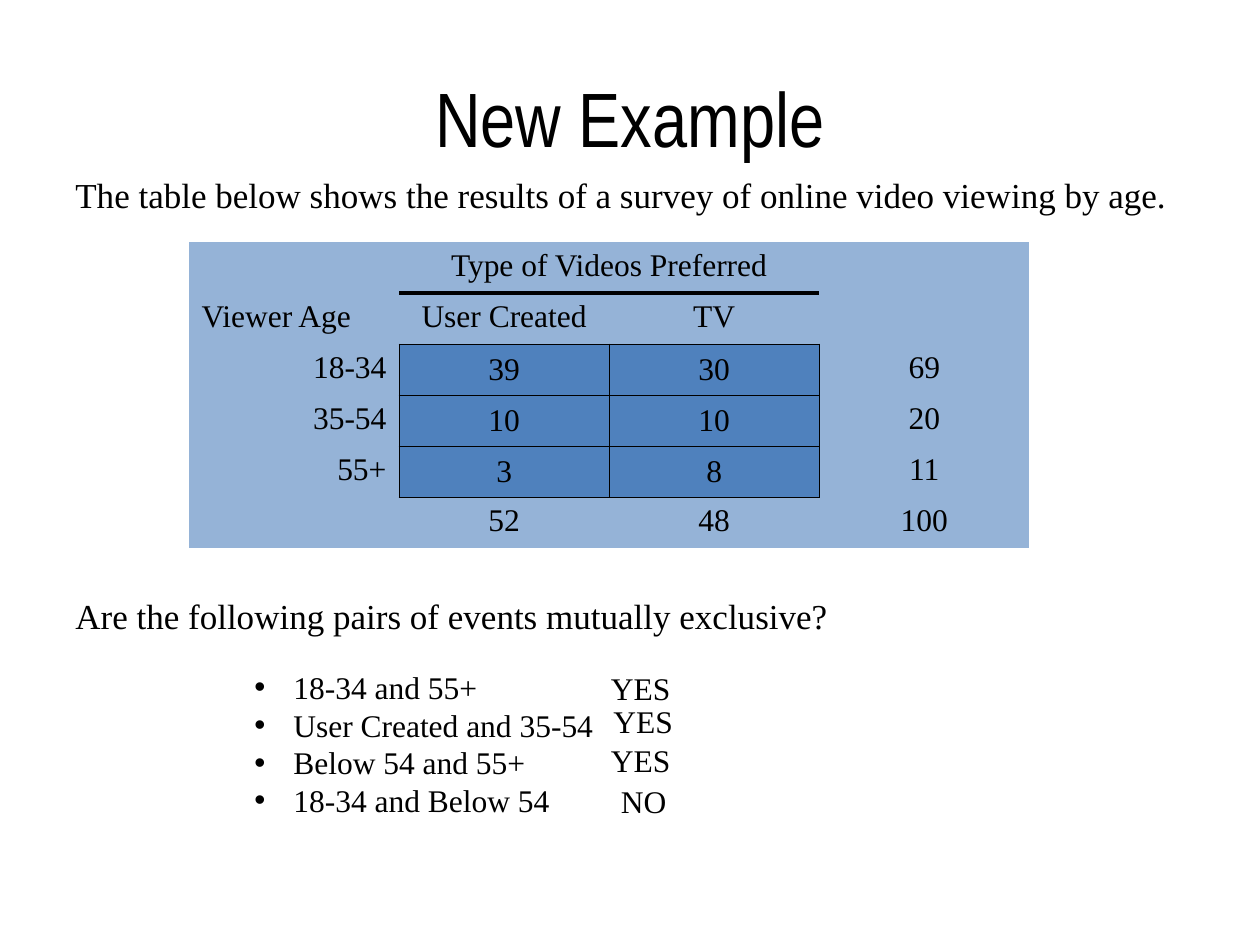
from lxml import etree
from pptx import Presentation
from pptx import util as u
from pptx.dml.color import RGBColor
from pptx.enum import text
from pptx.oxml.ns import qn

ALIGN = text.PP_ALIGN
MIDDLE = text.MSO_ANCHOR.MIDDLE


def colour(value):
    return RGBColor.from_string(value)


class SlideBuilder:
    ink = "000000"
    header_fill = "95B3D7"
    count_fill = "4F81BD"
    body_font = "Times New Roman"
    title_font = "Arial Narrow"

    def __init__(self, page):
        self.page = page

    def format_para(self, para, size, align=ALIGN.LEFT, font=None):
        para.alignment = align
        for span in para.runs:
            span.font.name = font or self.body_font
            span.font.size = u.Pt(size)
            span.font.color.rgb = colour(self.ink)

    def text_box(self, place, words, size=18, align=ALIGN.LEFT, font=None,
                 anchor=text.MSO_ANCHOR.TOP, before=0, bullets=False):
        box = self.page.shapes.add_textbox(*map(u.Inches, place))
        frame = box.text_frame
        frame.word_wrap = True
        frame.vertical_anchor = anchor
        frame.text = words
        for para in frame.paragraphs:
            self.format_para(para, size, align, font)
            para.space_before = u.Pt(before)
            if bullets:
                self.add_bullet(para)

    def add_bullet(self, para):
        props = para._p.get_or_add_pPr()
        props.set("marL", str(u.Inches(0.31)))
        props.set("indent", str(-u.Inches(0.31)))
        etree.SubElement(props, qn("a:buFont")).set("typeface", "Arial")
        etree.SubElement(props, qn("a:buChar")).set("char", "•")

    def border(self, cell, side, width):
        props = cell._tc.get_or_add_tcPr()
        line = etree.SubElement(props, qn(f"a:ln{side}"))
        line.set("w", str(u.Pt(width)))
        if width:
            fill = etree.SubElement(line, qn("a:solidFill"))
            etree.SubElement(fill, qn("a:srgbClr")).set("val", self.ink)
        else:
            etree.SubElement(line, qn("a:noFill"))

    def survey_table(self, place, rows):
        table = self.page.shapes.add_table(
            len(rows), len(rows[0]), *map(u.Inches, place)).table
        table.first_row = table.horz_banding = False
        neighbours = {"L": (0, -1), "R": (0, 1), "T": (-1, 0), "B": (1, 0)}

        def is_count(row, col):
            return 2 <= row <= 4 and 1 <= col <= 2

        for r, row in enumerate(rows):
            for c, words in enumerate(row):
                cell = table.cell(r, c)
                cell.text = words
                align = ALIGN.CENTER
                if c == 0:
                    align = ALIGN.LEFT if r == 1 else ALIGN.RIGHT
                self.format_para(cell.text_frame.paragraphs[0], 18, align)
                if is_count(r, c):
                    cell.vertical_anchor = MIDDLE
                # Thick rule under the heading, thin grid around the counts
                for side, (down, across) in neighbours.items():
                    under_heading = c in (1, 2) and (r, side) in ((0, "B"), (1, "T"))
                    on_grid = is_count(r, c) or is_count(r + down, c + across)
                    self.border(cell, side, 3 if under_heading else 0.5 if on_grid else 0)
                cell.fill.solid()
                cell.fill.fore_color.rgb = colour(
                    self.count_fill if is_count(r, c) else self.header_fill)
        table.cell(0, 1).merge(table.cell(0, 2))


def main():
    deck = Presentation()
    deck.slide_width, deck.slide_height = u.Inches(10), u.Inches(7.5)
    slide = SlideBuilder(deck.slides.add_slide(deck.slide_layouts[6]))

    # Title and introduction
    slide.text_box((0.5, 0.3, 9, 1.25), "New Example", 44, ALIGN.CENTER,
                   slide.title_font, MIDDLE)
    slide.text_box((0.5, 1.33, 9, 0.5),
                   "The table below shows the results of a survey of online "
                   "video viewing by age.", 20, before=4)

    # Survey results
    slide.survey_table((1.5, 1.92, 6.67, 2.43), [
        ["", "Type of Videos Preferred", "", ""],
        ["Viewer Age", "User Created", "TV", ""],
        ["18-34", "39", "30", "69"],
        ["35-54", "10", "10", "20"],
        ["55+", "3", "8", "11"],
        ["", "52", "48", "100"],
    ])

    # Question and event pairs
    slide.text_box((0.5, 4.67, 9, 0.67),
                   "Are the following pairs of events mutually exclusive?",
                   20, before=4)
    pairs = ["18-34 and 55+", "User Created and 35-54",
             "Below 54 and 55+", "18-34 and Below 54"]
    slide.text_box((1.92, 5.25, 4.08, 1.31), "\n".join(pairs), bullets=True)

    # Answers
    for left, top, width, answer in [(4.75, 5.26, 0.83, "YES"),
                                     (4.77, 5.52, 0.83, "YES"),
                                     (4.75, 5.83, 0.83, "YES"),
                                     (4.83, 6.16, 0.67, "NO")]:
        slide.text_box((left, top, width, 0.4), answer)

    deck.save("out.pptx")


if __name__ == "__main__":
    main()
